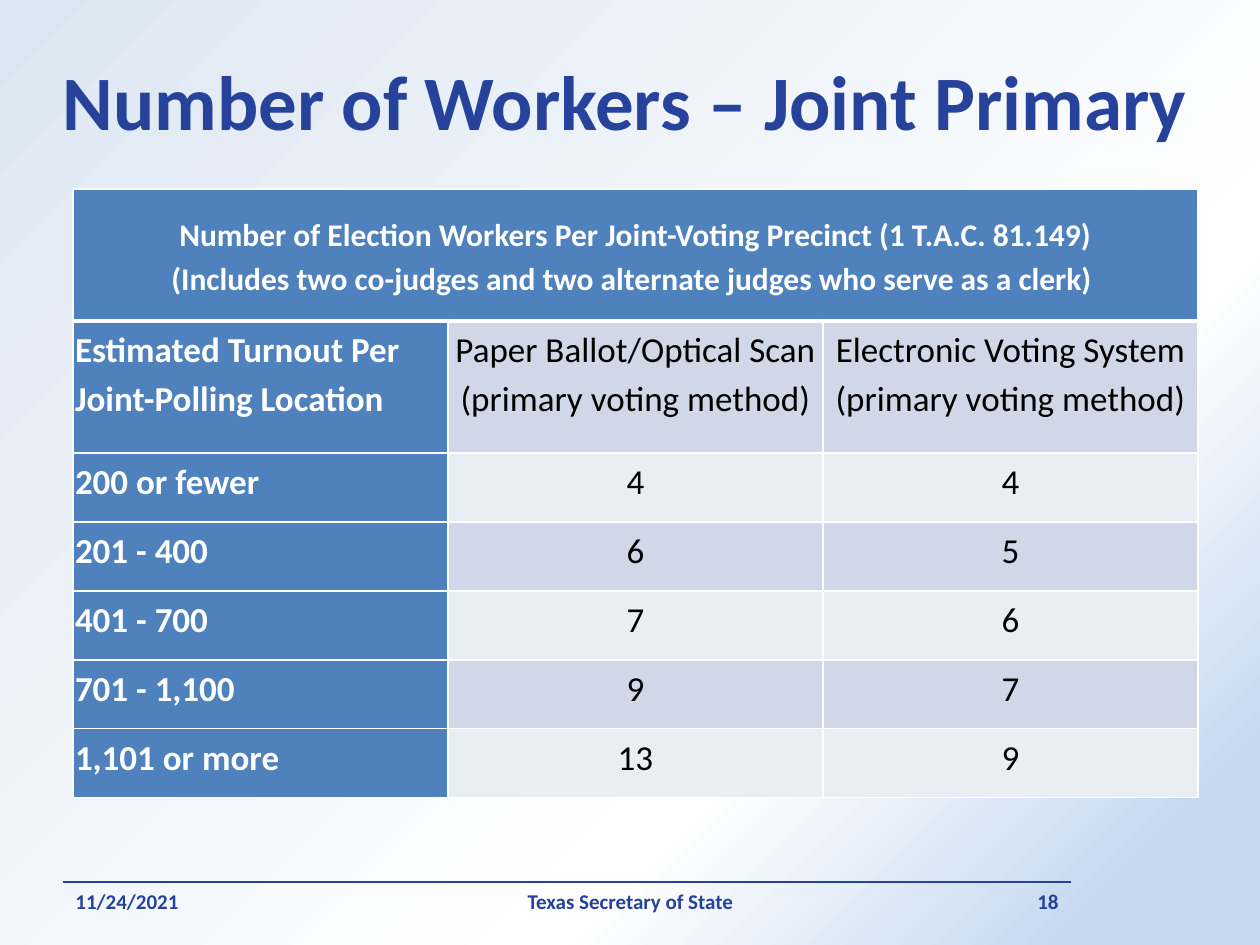
from copy import deepcopy
from lxml.etree import SubElement
from pptx import Presentation
from pptx.dml.color import RGBColor
from pptx.enum.shapes import MSO_CONNECTOR
from pptx.enum.text import MSO_ANCHOR, MSO_AUTO_SIZE, PP_ALIGN
from pptx.oxml import parse_xml
from pptx.oxml.ns import nsdecls, qn
from pptx.util import Emu, Pt

PX = 914400 // 126
THEME = {
    "font": "Calibri", "navy": "26429A", "blue": "4F81BD", "white": "FFFFFF", "black": "000000",
    "bands": ("D0D8E8", "E9EDF4"),
    "background": ((0, "DCE6F2"), (0.68, "FFFFFF"), (0.91, "C6D9F1")),
    "title": 44, "heading": 18, "body": 20, "footer": 12,
}


def px(*lengths):
    return [Emu(length * PX) for length in lengths]


def write(frame, text, size, color, bold, align, spacing=None):
    frame.text = text
    frame.word_wrap = True
    for para in frame.paragraphs:
        para.alignment = align
        if spacing:
            para.line_spacing = spacing
        for span in para.runs:
            span.font.name = THEME["font"]
            span.font.size = Pt(size)
            span.font.bold = bold
            span.font.color.rgb = RGBColor.from_string(color)


deck = Presentation()
deck.slide_width, deck.slide_height = px(1260, 945)
page = deck.slides.add_slide(deck.slide_layouts[5])

# Background: diagonal gradient with three stops
fill = page.background.fill
fill.gradient()
fill.gradient_angle = 315
stop_list = page.element.xpath(".//a:gsLst")[0]
stop_list.append(deepcopy(stop_list[0]))
for stop, (position, color) in zip(fill.gradient_stops, THEME["background"]):
    stop.position = position
    stop.color.rgb = RGBColor.from_string(color)

# Footer rule
rule = page.shapes.add_connector(MSO_CONNECTOR.STRAIGHT, *px(63, 882, 1071, 882))
rule.line.color.rgb = RGBColor.from_string(THEME["navy"])
rule.line.width = Pt(0.75)
SubElement(rule.element.spPr, qn("a:effectLst"))

# Footer texts
for left, width, text, align in (
    (63, 294, "11/24/2021", PP_ALIGN.LEFT),
    (431, 399, "Texas Secretary of State", PP_ALIGN.CENTER),
    (924, 147, "18", PP_ALIGN.RIGHT),
):
    box = page.shapes.add_textbox(*px(left, 876, width, 50))
    box.text_frame.vertical_anchor = MSO_ANCHOR.MIDDLE
    write(box.text_frame, text, THEME["footer"], THEME["navy"], True, align)

# Title
title = page.shapes.title
title.left, title.top, title.width, title.height = px(32, 21, 1187, 158)
title.text_frame.vertical_anchor = MSO_ANCHOR.MIDDLE
title.text_frame.auto_size = MSO_AUTO_SIZE.NONE
write(title.text_frame, "Number of Workers – Joint Primary",
      THEME["title"], THEME["navy"], True, PP_ALIGN.CENTER)

# Table of workers by turnout
rows = (
    ("Number of Election Workers Per Joint-Voting Precinct (1 T.A.C. 81.149)\n"
     "(Includes two co-judges and two alternate judges who serve as a clerk) ", "", ""),
    ("Estimated Turnout Per Joint-Polling Location",
     "Paper Ballot/Optical Scan\n(primary voting method)",
     "Electronic Voting System\n(primary voting method)"),
    ("200 or fewer", "4", "4"),
    ("201 - 400", "6", "5"),
    ("401 - 700", "7", "6"),
    ("701 - 1,100", "9", "7"),
    ("1,101 or more", "13", "9"),
)
table = page.shapes.add_table(len(rows), 3, *px(73, 189, 1125, 609)).table
table.cell(0, 0).merge(table.cell(0, 2))
for column in table.columns:
    column.width = Emu(375 * PX)

for r, texts in enumerate(rows):
    table.rows[r].height = Emu((132 if r < 2 else 69) * PX)
    for c, text in enumerate(texts):
        cell = table.cell(r, c)
        is_head = r == 0 or c == 0
        cell.fill.solid()
        cell.fill.fore_color.rgb = RGBColor.from_string(
            THEME["blue"] if is_head else THEME["bands"][(r - 1) % 2])
        cell.margin_left = cell.margin_right = cell.margin_top = cell.margin_bottom = Emu(2 * PX)
        cell.vertical_anchor = MSO_ANCHOR.MIDDLE if r == 0 else MSO_ANCHOR.TOP
        write(cell.text_frame, text, THEME["heading" if r == 0 else "body"],
              THEME["white" if is_head else "black"], is_head,
              PP_ALIGN.LEFT if r and c == 0 else PP_ALIGN.CENTER, 1.15)

        # White borders, thick under the heading row
        properties = cell._tc.get_or_add_tcPr()
        for index, side in enumerate("LRTB"):
            thick = (r, side) in ((0, "B"), (1, "T"))
            properties.insert(index, parse_xml(
                f'<a:ln{side} {nsdecls("a")} w="{Pt(3 if thick else 1)}"><a:solidFill>'
                f'<a:srgbClr val="{THEME["white"]}"/></a:solidFill></a:ln{side}>'))

deck.save("out.pptx")
